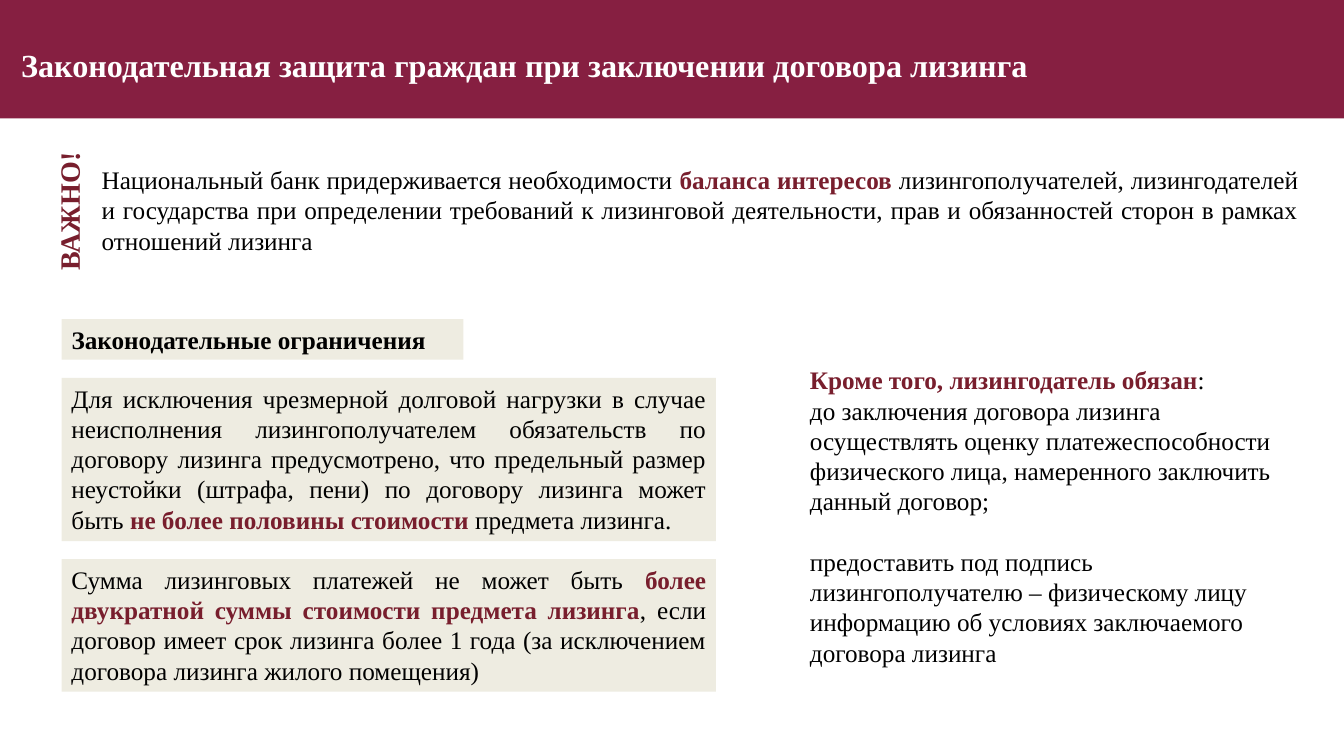
from pptx import Presentation
from pptx.dml.color import RGBColor
from pptx.enum import shapes, text
from pptx.util import Pt

FONT = "Times New Roman"
WINE, RED, SAND = "861F41", "781E2D", "EEECE1"
BLACK, WHITE = "000000", "FFFFFF"
LEFT, JUST, MID = text.PP_ALIGN.LEFT, text.PP_ALIGN.JUSTIFY, text.PP_ALIGN.CENTER


def paint(target, color):
    """Give a font or a fill a solid colour."""
    fill = target.fill if hasattr(target, "fill") else target
    fill.solid()
    fill.fore_color.rgb = RGBColor.from_string(color)


def write(shape, paras, size=18, align=LEFT, gap=0):
    """Fill with paragraphs of (words, colour, bold) runs; gap precedes the last."""
    frame = shape.text_frame
    frame.word_wrap = True
    frame.vertical_anchor = text.MSO_ANCHOR.TOP
    for i, runs in enumerate(paras):
        para = frame.paragraphs[0] if i == 0 else frame.add_paragraph()
        para.alignment = align
        para.font.name, para.font.size = FONT, Pt(size)
        if gap and i == len(paras) - 1:
            para.space_before = Pt(gap)
        for words, color, bold in runs:
            run = para.add_run()
            run.text = words
            run.font.bold = bold
            paint(run.font, color)


def block(slide, box, color):
    shape = slide.shapes.add_shape(shapes.MSO_SHAPE.RECTANGLE, *map(Pt, box))
    shape.shadow.inherit = False
    paint(shape.fill, color)
    shape.line.fill.background()
    return shape


def label(slide, box):
    return slide.shapes.add_textbox(*map(Pt, box))


def plain(words):
    return words, BLACK, False


def strong(words, color=RED):
    return words, color, True


def header(slide, x, y, w, h):
    block(slide, (x, y, w, h), WINE)
    title = label(slide, (x + 8, y + 25, 790, 42))
    write(title, [[strong("Законодательная защита граждан при заключении договора лизинга", WHITE)]], 23)
    title.text_frame.vertical_anchor = text.MSO_ANCHOR.MIDDLE


def notice(slide, x, y, w, h):
    """Main statement with an upright mark on its left."""
    write(label(slide, (x, y, w, h)), [[
        plain("Национальный банк придерживается необходимости "),
        strong("баланса интересов "),
        plain("лизингополучателей, лизингодателей и государства при определении "
              "требований к лизинговой деятельности, прав и обязанностей сторон "
              "в рамках отношений лизинга")]], align=JUST)
    mark = label(slide, (x - 67, y + 21, 102, 32))
    mark.rotation = 270
    write(mark, [[strong("ВАЖНО!")]], 20, MID)


def limits(slide, x, y, w, gap):
    """Stack of a heading and two rules, a fixed gap apart."""
    parts = [
        (287, 29, LEFT, [strong("Законодательные ограничения", BLACK)]),
        (w, 116.5, JUST, [
            plain("Для исключения чрезмерной долговой нагрузки в случае неисполнения "
                  "лизингополучателем обязательств по договору лизинга предусмотрено, "
                  "что предельный размер неустойки (штрафа, пени) по договору лизинга "
                  "может быть "),
            strong("не более половины стоимости "),
            plain("предмета лизинга.")]),
        (w, 94.5, JUST, [
            plain("Сумма лизинговых платежей не может быть "),
            strong("более двукратной суммы стоимости предмета лизинга"),
            plain(", если договор имеет срок лизинга более 1 года (за исключением "
                  "договора лизинга жилого помещения)")]),
    ]
    for width, h, align, runs in parts:
        write(block(slide, (x, y, width, h), SAND), [runs], align=align)
        y += h + gap


def duties(slide, x, y, w, h):
    write(label(slide, (x, y, w, h)), [
        [strong("Кроме того, лизингодатель обязан"), plain(":")],
        [plain("до заключения договора лизинга осуществлять оценку платежеспособности "
               "физического лица, намеренного заключить данный договор;")],
        [plain("предоставить под подпись лизингополучателю – физическому лицу "
               "информацию об условиях заключаемого договора лизинга")],
    ], gap=21.6)


def main():
    deck = Presentation()
    deck.slide_width, deck.slide_height = Pt(960), Pt(540)
    slide = deck.slides.add_slide(deck.slide_layouts[6])
    header(slide, 0, 0, 960, 84.5)
    notice(slide, 65.5, 114, 869, 72.5)
    limits(slide, 44, 228, 467.5, 13)
    duties(slide, 571.5, 257, 363, 225)
    deck.save("out.pptx")


if __name__ == "__main__":
    main()
